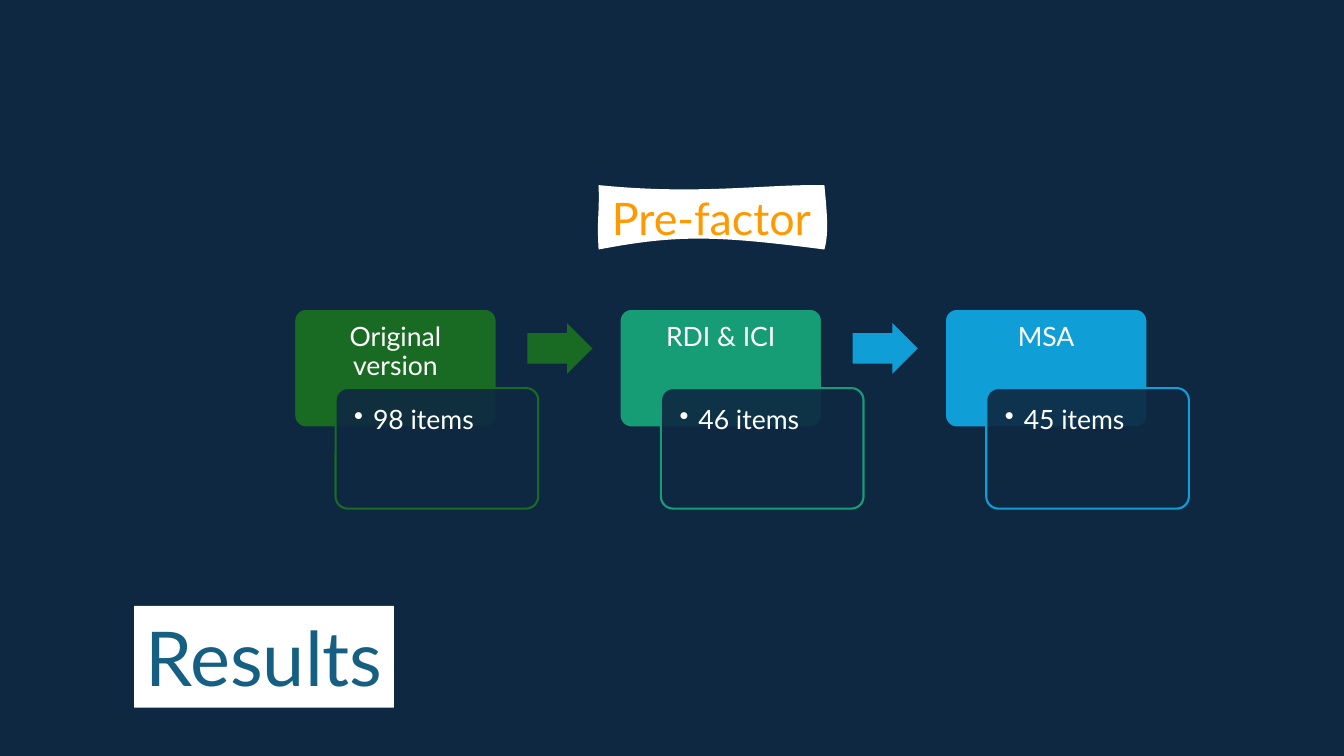
from lxml.etree import SubElement
from pptx import Presentation
from pptx.dml.color import RGBColor
from pptx.enum.shapes import MSO_SHAPE
from pptx.enum.text import MSO_ANCHOR, MSO_AUTO_SIZE, PP_ALIGN
from pptx.oxml.ns import qn
from pptx.util import Pt

NAVY, WHITE = "0E2841", "FFFFFF"
GREEN, TEAL, BLUE = "196B24", "179D76", "0F9ED5"
TITLE_BLUE, ORANGE = "156082", "FF9900"

# Box, then two curve controls for the top, right, bottom and left edges
TITLE_BOX = (95.8, 432.7, 185.6, 72.7)
TITLE_EDGES = [((77.8, 7.2), (119.5, -0.7)), ((189.4, 10.1), (190.1, 63.4)),
               ((104.4, 62.6), (84.2, 61.9)), ((-2.9, 54.7), (2.9, 11.5))]
STAGE_BOX = (427.6, 132.2, 161.3, 46)
STAGE_EDGES = [((70.6, 7.2), (118.1, -0.7)), ((162.7, 15.8), (164.9, 33.8)),
               ((83.5, 36), (56.2, 35.3)), ((-1.4, 23), (0.7, 22.3))]

# Heading, detail, colour, colour of the arrow to the next step
STEPS = [("Original version", "98 items", GREEN, GREEN),
         ("RDI & ICI", "46 items", TEAL, BLUE),
         ("MSA", "45 items", BLUE, None)]
STEP_LEFT, STEP_TOP, STEP_PITCH = 210.1, 220.6, 232.4


def color(value):
    return RGBColor.from_string(value)


def paint(shape, fill, line=None):
    shape.fill.solid()
    shape.fill.fore_color.rgb = color(fill)
    if line:
        shape.line.color.rgb = color(line)
        shape.line.width = Pt(1.5)
    else:
        shape.line.fill.background()


def write(shape, text, size, text_color, align, bullet=None):
    shape.text_frame.text = text
    para = shape.text_frame.paragraphs[0]
    if bullet:
        properties = para._p.get_or_add_pPr()
        properties.set("marL", str(Pt(13.5)))
        properties.set("indent", str(Pt(-13.5)))
        SubElement(properties, qn("a:buChar"), char=bullet)
    para.alignment = align
    para.font.name = "Lato"
    para.font.size = Pt(size)
    para.font.color.rgb = color(text_color)
    return para


def set_frame(shape, side, top, anchor, wrap):
    frame = shape.text_frame
    frame.word_wrap = wrap
    frame.auto_size = MSO_AUTO_SIZE.NONE
    frame.vertical_anchor = anchor
    frame.margin_left = frame.margin_right = Pt(side)
    frame.margin_top = frame.margin_bottom = Pt(top)


def bend_edges(shape, box, edges):
    """Give the shape an outline of four cubic curves, one for each side."""
    width, height = box[2:]
    corners = [(0, 0), (width, 0), (width, height), (0, height)]
    properties = shape.element.spPr
    for preset in properties.findall(qn("a:prstGeom")):
        properties.remove(preset)
    geometry = SubElement(properties, qn("a:custGeom"))
    properties.insert(1, geometry)
    for name in ("avLst", "gdLst", "ahLst", "cxnLst"):
        SubElement(geometry, qn(f"a:{name}"))
    SubElement(geometry, qn("a:rect"), l="l", t="t", r="r", b="b")
    paths = SubElement(geometry, qn("a:pathLst"))
    outline = SubElement(paths, qn("a:path"), w=str(Pt(width)), h=str(Pt(height)))
    segments = [("moveTo", corners[:1])]
    for index, controls in enumerate(edges):
        segments.append(("cubicBezTo", [*controls, corners[(index + 1) % 4]]))
    for name, points in segments:
        segment = SubElement(outline, qn(f"a:{name}"))
        for x, y in points:
            SubElement(segment, qn("a:pt"), x=str(Pt(x)), y=str(Pt(y)))
    SubElement(outline, qn("a:close"))


def style_banner(shape, box, edges, text, size, text_color):
    shape.left, shape.top, shape.width, shape.height = map(Pt, box)
    bend_edges(shape, box, edges)
    paint(shape, WHITE)
    set_frame(shape, 7.2, 3.6, MSO_ANCHOR.MIDDLE, False)
    write(shape, text, size, text_color, PP_ALIGN.CENTER)


def add_panel(page, left, top, height, fill, line, inset):
    panel = page.shapes.add_shape(MSO_SHAPE.ROUNDED_RECTANGLE,
                                  Pt(left), Pt(top), Pt(144.7), Pt(height))
    panel.shadow.inherit = False
    panel.adjustments[0] = 0.1
    paint(panel, fill, line)
    set_frame(panel, inset, inset, MSO_ANCHOR.TOP, True)
    return panel


def add_step(page, left, top, heading, detail, accent, arrow_color):
    card = add_panel(page, left, top, 84.8, accent, NAVY, 8.3)
    write(card, heading, 19, WHITE, PP_ALIGN.CENTER).line_spacing = 0.9

    panel = add_panel(page, left + 29.6, top + 56.6, 86.1, NAVY, accent, 10.8)
    fill_color = panel.element.spPr.find(qn("a:solidFill"))[0]
    SubElement(fill_color, qn("a:alpha"), val="90000")
    write(panel, detail, 19, WHITE, PP_ALIGN.LEFT, "•").line_spacing = 0.9

    if arrow_color:
        arrow = page.shapes.add_shape(MSO_SHAPE.RIGHT_ARROW, Pt(left + 166.6),
                                      Pt(top + 10.2), Pt(46.5), Pt(36.2))
        arrow.shadow.inherit = False
        arrow.adjustments[0] = 0.6
        arrow.adjustments[1] = 0.5
        paint(arrow, arrow_color)


def main():
    deck = Presentation()
    deck.slide_width, deck.slide_height = Pt(960), Pt(540)
    page = deck.slides.add_slide(deck.slide_layouts[5])
    page.background.fill.solid()
    page.background.fill.fore_color.rgb = color(NAVY)
    style_banner(page.shapes.title, TITLE_BOX, TITLE_EDGES, "Results", 54, TITLE_BLUE)
    stage = page.shapes.add_textbox(*map(Pt, STAGE_BOX))
    style_banner(stage, STAGE_BOX, STAGE_EDGES, "Pre-factor", 32, ORANGE)
    for index, step in enumerate(STEPS):
        add_step(page, STEP_LEFT + index * STEP_PITCH, STEP_TOP, *step)
    deck.save("out.pptx")


if __name__ == "__main__":
    main()
